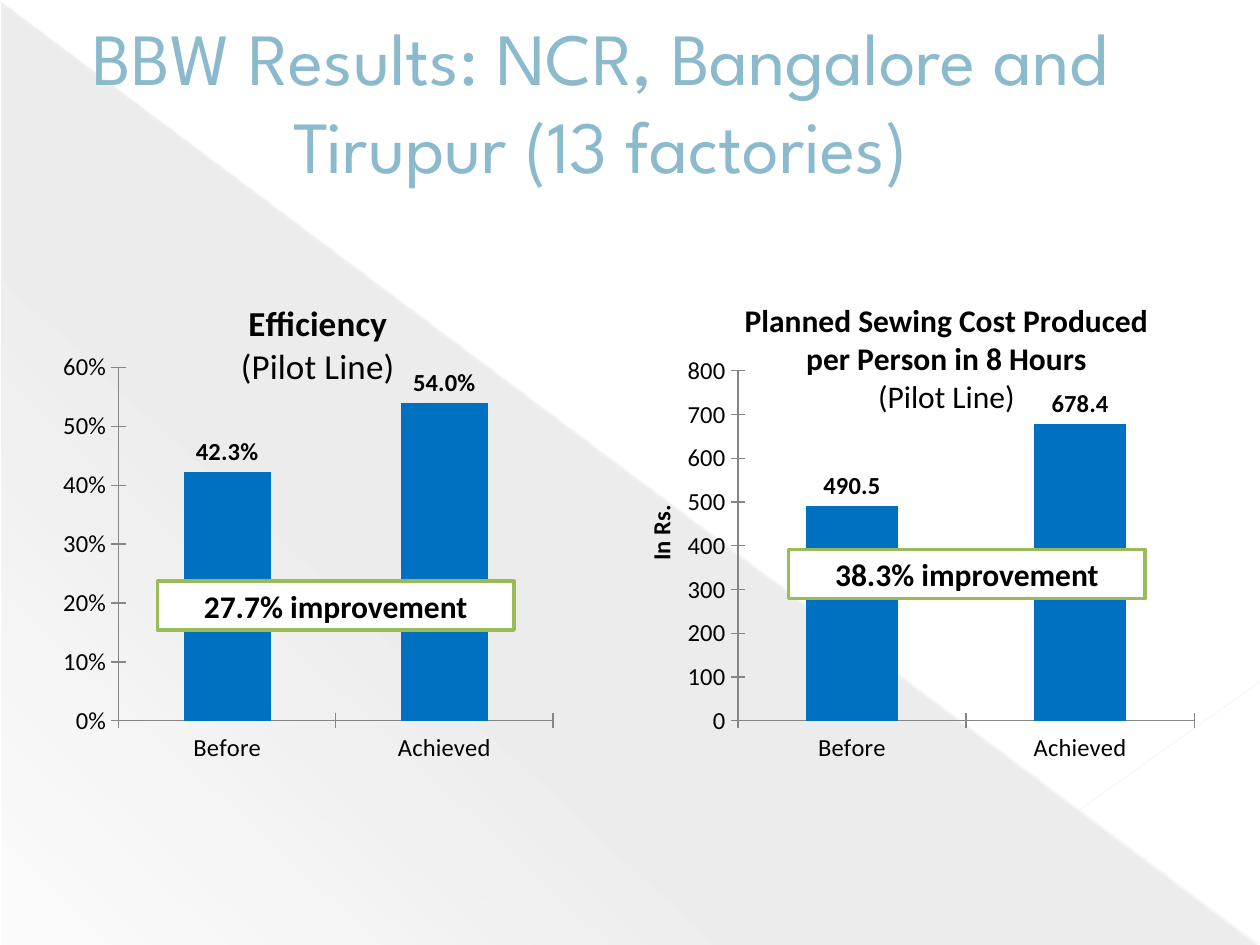
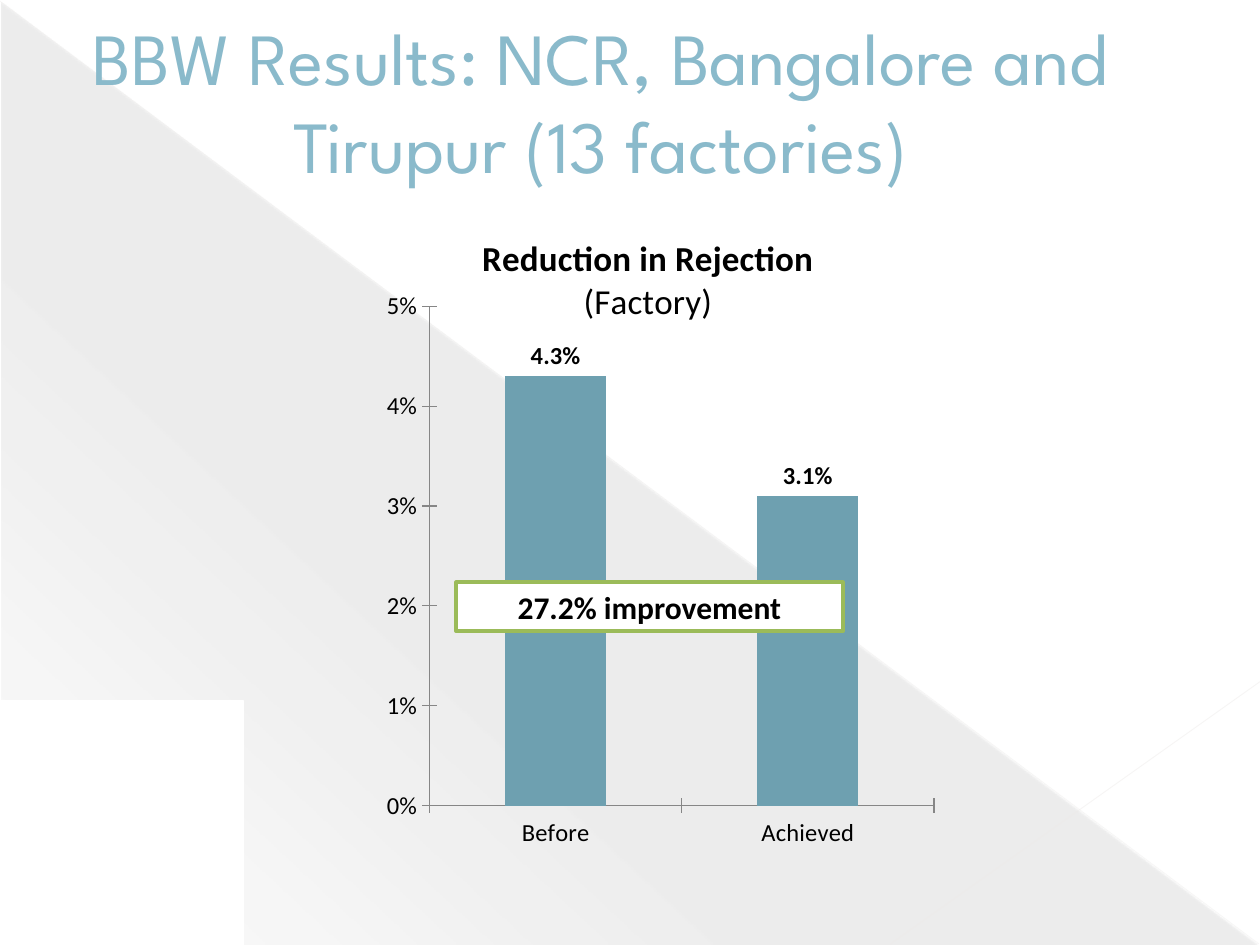
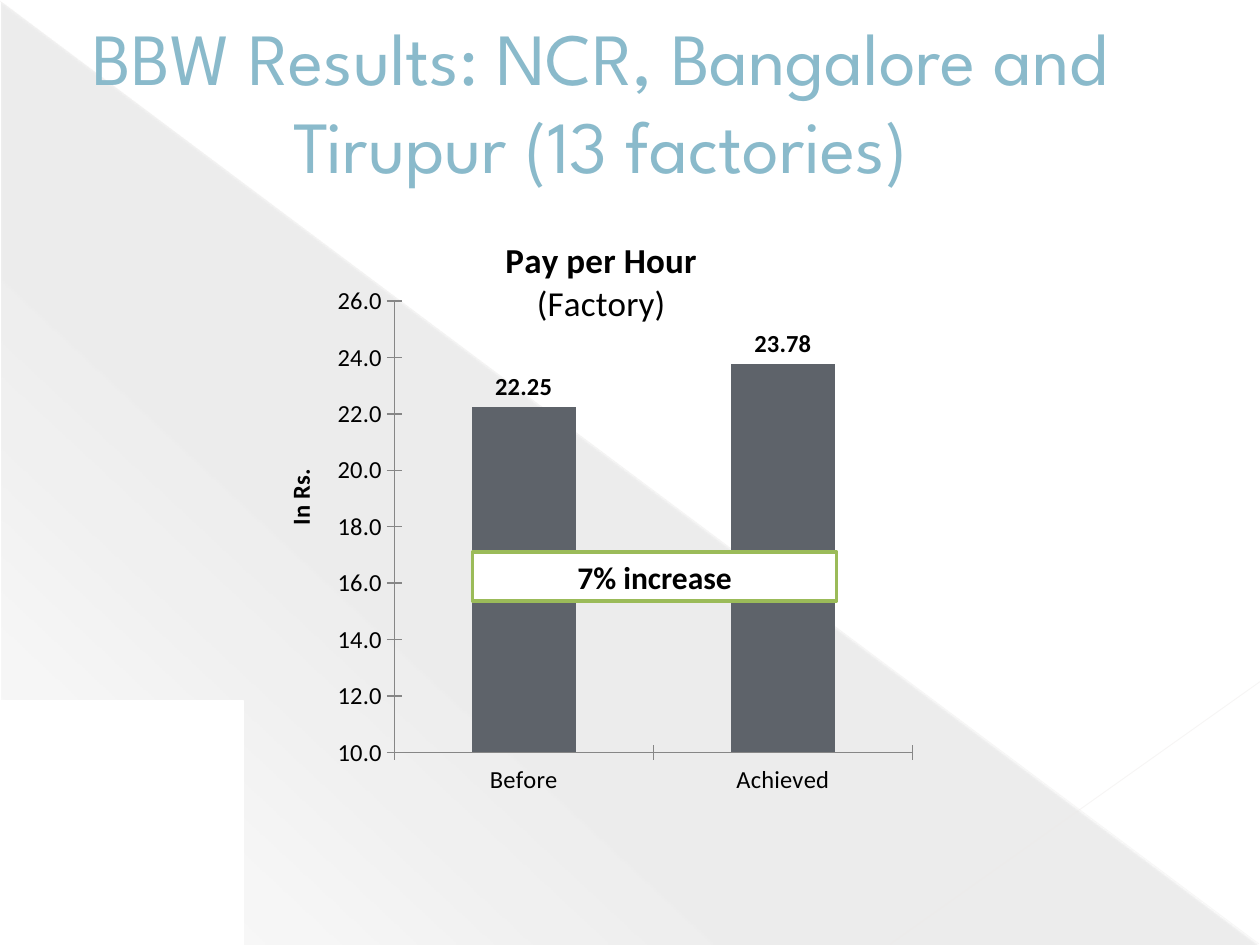
from dataclasses import dataclass

from pptx import Presentation
from pptx.chart.data import CategoryChartData as Data
from pptx.dml.color import RGBColor as Rgb
from pptx.enum.chart import XL_CHART_TYPE as Kind, XL_LABEL_POSITION as Spot, XL_TICK_MARK as Tick
from pptx.enum.shapes import MSO_CONNECTOR as Link, MSO_SHAPE as Form
from pptx.enum.text import MSO_ANCHOR as Anchor, MSO_AUTO_SIZE as Fit, PP_ALIGN as Align
from pptx.oxml import parse_xml
from pptx.oxml.ns import nsdecls
from pptx.util import Inches, Pt


@dataclass(frozen=True)
class Theme:
    head: str = "League Spartan"
    body: str = "Calibri"
    sky: str = "8ABACB"
    edge: str = "4C6F7A"
    ink: str = "000000"
    white: str = "FFFFFF"
    green: str = "9BBB59"
    blue: str = "0070C0"
    teal: str = "6EA0B0"
    slate: str = "5E636A"
    axis: str = "868686"
    shade: str = "3B3B3B"
    title: int = 42
    large: int = 20
    note: int = 18
    small: int = 14


THEME = Theme()
HEAD = "BBW Results: NCR, Bangalore and Tirupur (13 factories)"


def write(frame, text, font=THEME.body, size=THEME.note, color=THEME.ink,
          bold=True, plain=0, align=Align.CENTER):
    """Fill a frame line by line; the last `plain` lines are not bold."""
    lines = text.split("\n")
    for i, line in enumerate(lines):
        para = frame.add_paragraph() if i else frame.paragraphs[0]
        para.alignment = align
        run = para.add_run()
        run.text = line
        run.font.name, run.font.size = font, Pt(size)
        run.font.bold = bold and i < len(lines) - plain
        run.font.color.rgb = Rgb.from_string(color)


def place(node, index, x, y, w=None, h=None):
    """Give a chart part a fixed layout, in fractions of the chart."""
    for old in node.xpath("c:layout"):
        node.remove(old)
    inner = '<c:layoutTarget val="inner"/>' if w else ""
    extent = f'<c:w val="{w}"/><c:h val="{h}"/>' if w else ""
    node.insert(index, parse_xml(
        f'<c:layout {nsdecls("c")}><c:manualLayout>{inner}'
        f'<c:xMode val="edge"/><c:yMode val="edge"/>'
        f'<c:x val="{x}"/><c:y val="{y}"/>{extent}</c:manualLayout></c:layout>'))


class Deck:
    def __init__(self, theme):
        self.theme = theme
        self.prs = Presentation()
        self.prs.slide_width, self.prs.slide_height = Inches(10), Inches(7.5)
        self.layout = self.prs.slide_layouts[5]
        self.slide = None

    def page(self, text):
        first = self.slide is None
        self.slide = self.prs.slides.add_slide(self.layout)
        if first:
            self.backdrop()
        self.title(text)

    def backdrop(self):
        """Draw the shared background and move it into the layout."""
        parts = [self.wedge(),
                 self.line(0, 0.01, 9.99, 7.49, "EAE8E6", 0.39, 35),
                 self.line(10, 5.41, 7.07, 7.49, "ECEAE8", 0.47, 45)]
        for i, part in enumerate(parts):
            part.element.xpath(".//p:cNvPr")[0].set("id", str(20 + i))
            self.layout.shapes.element.insert(2 + i, part.element)

    def wedge(self):
        shape = self.box(0.01, 0.02, 9.98, 7.48, form=Form.RIGHT_TRIANGLE)
        shape.line.fill.background()
        shape.fill.gradient()
        old = shape.element.xpath("./p:spPr/a:gradFill")[0]
        stops = "".join(
            f'<a:gs pos="{pos * 1000}"><a:srgbClr val="{self.theme.shade}">'
            f'<a:alpha val="{alpha * 1000}"/></a:srgbClr></a:gs>'
            for pos, alpha in ((0, 10), (70, 8), (100, 1)))
        old.getparent().replace(old, parse_xml(
            f'<a:gradFill {nsdecls("a")}><a:gsLst>{stops}</a:gsLst>'
            f'<a:lin ang="{133 * 60000}" scaled="0"/></a:gradFill>'))
        return shape

    def line(self, x1, y1, x2, y2, color, width, alpha):
        line = self.slide.shapes.add_connector(
            Link.STRAIGHT, Inches(x1), Inches(y1), Inches(x2), Inches(y2))
        line.line.color.rgb = Rgb.from_string(color)
        line.line.width = Pt(width)
        line.element.xpath(".//a:ln//a:srgbClr")[0].append(
            parse_xml(f'<a:alpha {nsdecls("a")} val="{alpha * 1000}"/>'))
        line.element.spPr.append(parse_xml(f'<a:effectLst {nsdecls("a")}/>'))
        return line

    def title(self, text):
        shape = self.slide.shapes.title
        shape.left, shape.top = Inches(0.47), Inches(0.17)
        shape.width, shape.height = Inches(8.59), Inches(1.25)
        frame = shape.text_frame
        frame.word_wrap, frame.auto_size = True, Fit.NONE
        frame.vertical_anchor = Anchor.MIDDLE
        write(frame, text, font=self.theme.head, size=self.theme.title,
              color=self.theme.sky, bold=False)
        # Thin outline around the letters
        shape.element.xpath(".//a:rPr")[0].insert(0, parse_xml(
            f'<a:ln {nsdecls("a")} w="6350"><a:solidFill>'
            f'<a:srgbClr val="{self.theme.edge}"/></a:solidFill></a:ln>'))

    def box(self, x, y, w, h, line=THEME.white, width=0.75, form=Form.RECTANGLE):
        shape = self.slide.shapes.add_shape(
            form, Inches(x), Inches(y), Inches(w), Inches(h))
        shape.shadow.inherit = False
        shape.fill.solid()
        shape.fill.fore_color.rgb = Rgb.from_string(self.theme.white)
        shape.line.color.rgb = Rgb.from_string(line)
        shape.line.width = Pt(width)
        return shape

    def badge(self, text, x, y, w):
        shape = self.box(x, y, w, 0.39, line=self.theme.green, width=2)
        write(shape.text_frame, text)

    def patch(self):
        self.box(0, 5.56, 1.93, 1.94)

    def chart(self, text, vals, at, plot, color, scale, form, label,
              head, size=THEME.large, unit=None):
        data = Data()
        data.categories = ["Before", "Achieved"]
        data.add_series("Series 1", vals)
        chart = self.slide.shapes.add_chart(
            Kind.COLUMN_CLUSTERED, *map(Inches, at), data).chart
        chart.has_legend = False
        chart.font.name, chart.font.size = self.theme.body, Pt(self.theme.small)
        chart.font.color.rgb = Rgb.from_string(self.theme.ink)

        # Title and plot area
        write(chart.chart_title.text_frame, text, size=size, plain=1)
        place(chart.chart_title.element, 1, *head)
        area = chart.element.xpath(".//c:plotArea")[0]
        place(area, 0, *plot)

        # Axes
        for axis in (chart.category_axis, chart.value_axis):
            axis.has_major_gridlines = False
            axis.major_tick_mark = Tick.CROSS
            axis.format.line.color.rgb = Rgb.from_string(self.theme.axis)
            axis.format.line.width = Pt(0.75)
        axis.minimum_scale, axis.maximum_scale, axis.major_unit = scale
        axis.tick_labels.number_format = form
        axis.tick_labels.number_format_is_linked = False
        if unit:
            write(axis.axis_title.text_frame, "In Rs.", size=self.theme.small)
            place(axis.axis_title.element, 1, *unit)

        # Bars and their labels
        bars = chart.plots[0]
        bars.gap_width, bars.vary_by_categories = 150, False
        fill = bars.series[0].format.fill
        fill.solid()
        fill.fore_color.rgb = Rgb.from_string(color)
        bars.has_data_labels = True
        labels = bars.data_labels
        labels.show_value, labels.position = True, Spot.OUTSIDE_END
        labels.number_format, labels.number_format_is_linked = label, False
        labels.font.bold, labels.font.size = True, Pt(self.theme.small)
        labels.font.name = self.theme.body
        labels.font.color.rgb = Rgb.from_string(self.theme.ink)


def main():
    deck = Deck(THEME)

    # Efficiency and sewing cost
    deck.page(HEAD)
    deck.chart("Planned Sewing Cost Produced\nper Person in 8 Hours\n(Pilot Line)",
               (490.5, 678.4), at=(4.98, 2.31, 4.74, 3.86),
               plot=(0.185, 0.164, 0.764, 0.72), color=THEME.blue,
               scale=(0, 800, 100), form="#,##0", label="#,##0.0",
               head=(0.19, 0.01), size=THEME.note, unit=(0.02, 0.43))
    deck.chart("Efficiency\n(Pilot Line)", (0.423, 0.54),
               at=(0.28, 2.31, 4.33, 3.86), plot=(0.153, 0.157, 0.796, 0.727),
               color=THEME.blue, scale=(0, 0.6, 0.1), form="0%", label="0.0%",
               head=(0.37, 0.01))
    deck.badge("27.7% improvement", 1.25, 4.61, 2.83)
    deck.badge("38.3% improvement", 6.26, 4.36, 2.83)

    # Rejection
    deck.page(HEAD)
    deck.chart("Reduction in Rejection\n(Factory)", (0.043, 0.031),
               at=(2.64, 1.78, 5.03, 5.22), plot=(0.153, 0.125, 0.796, 0.759),
               color=THEME.teal, scale=(0, 0.05, 0.01), form="0%", label="0.0%",
               head=(0.23, 0.01))
    deck.patch()
    deck.badge("27.2% improvement", 3.62, 4.62, 3.07)

    # Pay
    deck.page(HEAD)
    deck.patch()
    deck.chart("Pay per Hour\n(Factory)", (22.25, 23.78),
               at=(2.11, 1.8, 5.2, 4.72), plot=(0.196, 0.125, 0.791, 0.759),
               color=THEME.slate, scale=(10, 26, 2), form="#,##0.0",
               label="#,##0.00", head=(0.36, 0.01), unit=(0.02, 0.4))
    deck.badge("7% increase", 3.75, 4.38, 2.89)

    deck.prs.save("out.pptx")


if __name__ == "__main__":
    main()
